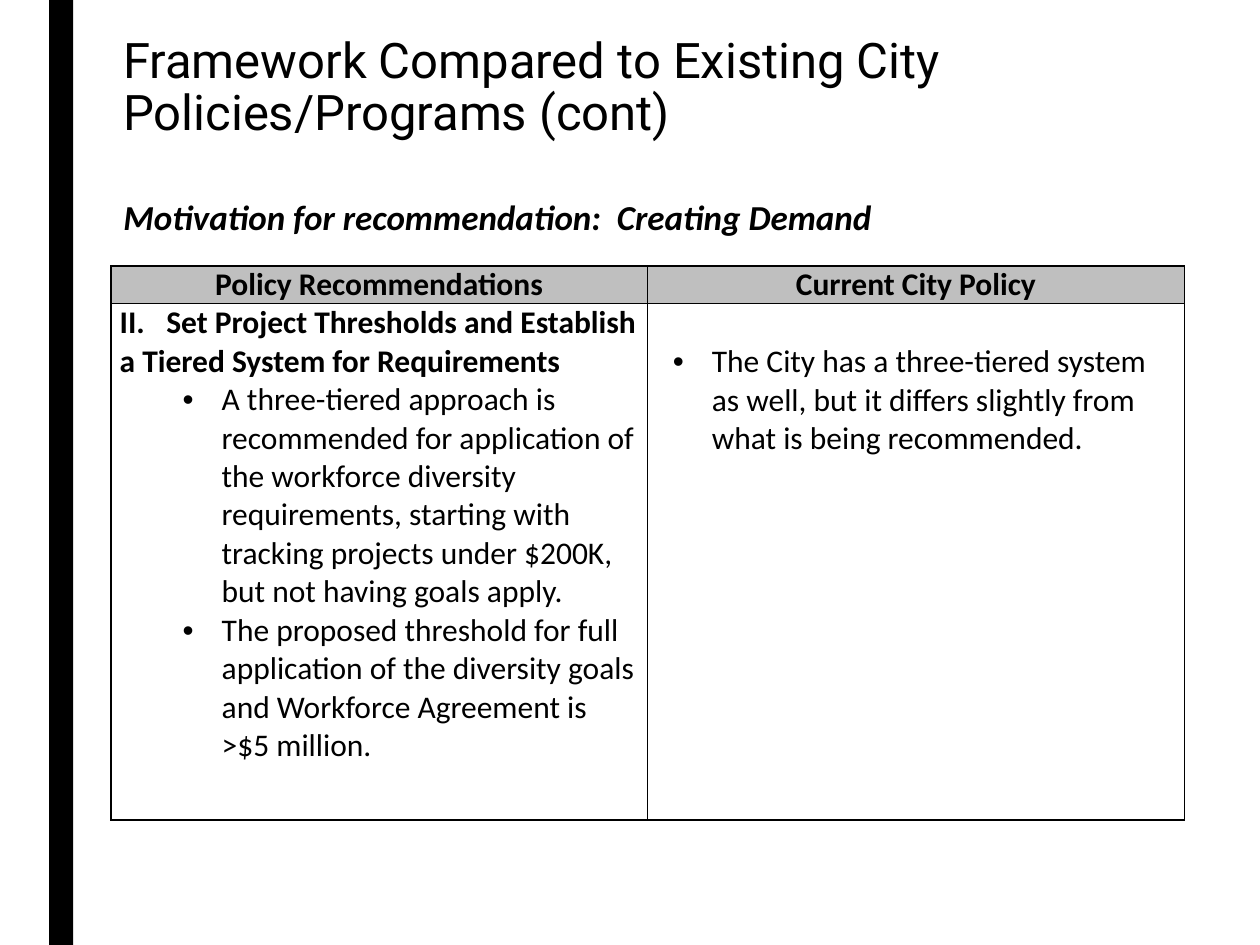
from lxml.etree import SubElement
from pptx import Presentation
from pptx.dml.color import RGBColor
from pptx.enum.shapes import MSO_SHAPE
from pptx.enum.text import MSO_ANCHOR, PP_ALIGN
from pptx.oxml.ns import qn
from pptx.util import Inches, Pt


def color(code):
    return RGBColor.from_string(code)


def write(para, text, **form):
    run = para.add_run()
    run.text = text
    run.font.color.rgb = color("000000")
    for key, value in form.items():
        setattr(run.font, key, value)


deck = Presentation()
deck.slide_width, deck.slide_height = Inches(10), Inches(7.5)
slide = deck.slides.add_slide(deck.slide_layouts[6])

# Side bar
bar = slide.shapes.add_shape(
    MSO_SHAPE.RECTANGLE, Inches(0.39), 0, Inches(0.19), Inches(7.5))
bar.shadow.inherit = False
bar.fill.solid()
bar.fill.fore_color.rgb = color("000000")
bar.line.fill.background()

# Title and subtitle: top, width, height, line spacing, text, format
heads = [
    (0.24, 7.88, 1.09, 0.89,
     "Framework Compared to Existing City Policies/Programs (cont)",
     dict(name="Roboto", size=Pt(28))),
    (1.5, 7.72, 0.44, 1,
     "Motivation for recommendation:  Creating Demand",
     dict(name="Calibri", size=Pt(20), bold=True, italic=True)),
]
for top, width, height, space, text, form in heads:
    box = slide.shapes.add_textbox(
        Inches(0.88), Inches(top), Inches(width), Inches(height))
    box.text_frame.word_wrap = True
    para = box.text_frame.paragraphs[0]
    para.line_spacing = space
    write(para, text, **form)

# Table text: each paragraph is (kind, left indent, text)
rows = [
    [[("head", 0, "Policy Recommendations")],
     [("head", 0, "Current City Policy")]],
    [[("topic", 0, "II.\tSet Project Thresholds and Establish a Tiered "
       "System for Requirements"),
      ("item", 0.81, "A three-tiered approach is recommended for application "
       "of the workforce diversity requirements, starting with tracking "
       "projects under $200K, but not having goals apply."),
      ("item", 0.81, "The proposed threshold for full application of the "
       "diversity goals and Workforce Agreement is >$5 million.")],
     [("item", 0.44, "The City has a three-tiered system as well, but it "
       "differs slightly from what is being recommended.")]],
]

# Table grid
frame = slide.shapes.add_table(
    2, 2, Inches(0.88), Inches(2.11), Inches(8.52), Inches(4.4))
table = frame.table
for col in table.columns:
    col.width = Inches(4.26)
for row, height in zip(table.rows, (0.3, 4.1)):
    row.height = Inches(height)

# Cells
margins = dict(margin_left=0.07, margin_right=0.07,
               margin_top=0, margin_bottom=0)
for r, row in enumerate(rows):
    for c, paras in enumerate(row):
        cell = table.cell(r, c)
        cell.vertical_anchor = MSO_ANCHOR.TOP
        for key, value in margins.items():
            setattr(cell, key, Inches(value))

        # Borders and fill
        props = cell._tc.get_or_add_tcPr()
        for side in ("lnL", "lnR", "lnT", "lnB"):
            line = SubElement(props, qn("a:" + side), w=str(Pt(1)))
            fill = SubElement(line, qn("a:solidFill"))
            SubElement(fill, qn("a:srgbClr"), val="000000")
        if r == 0:
            cell.fill.solid()
            cell.fill.fore_color.rgb = color("BFBFBF")
        else:
            cell.fill.background()

        # Paragraphs
        for i, (kind, left, text) in enumerate(paras):
            body = cell.text_frame
            para = body.add_paragraph() if i else body.paragraphs[0]
            para.alignment = PP_ALIGN.CENTER if kind == "head" else PP_ALIGN.LEFT
            props = para._p.get_or_add_pPr()
            if kind == "item":
                props.set("marL", str(Inches(left)))
                props.set("indent", str(Inches(-0.31)))
                SubElement(props, qn("a:buFont"), typeface="Arial")
                SubElement(props, qn("a:buChar"), char="•")
            elif kind == "topic":
                tabs = SubElement(props, qn("a:tabLst"))
                SubElement(tabs, qn("a:tab"), pos=str(Inches(0.37)), algn="l")
            write(para, text, name="Calibri", size=Pt(18), bold=kind != "item")

# The policy item starts one line lower than the topic beside it
table.cell(1, 1).margin_top = Inches(0.31)

deck.save("out.pptx")
